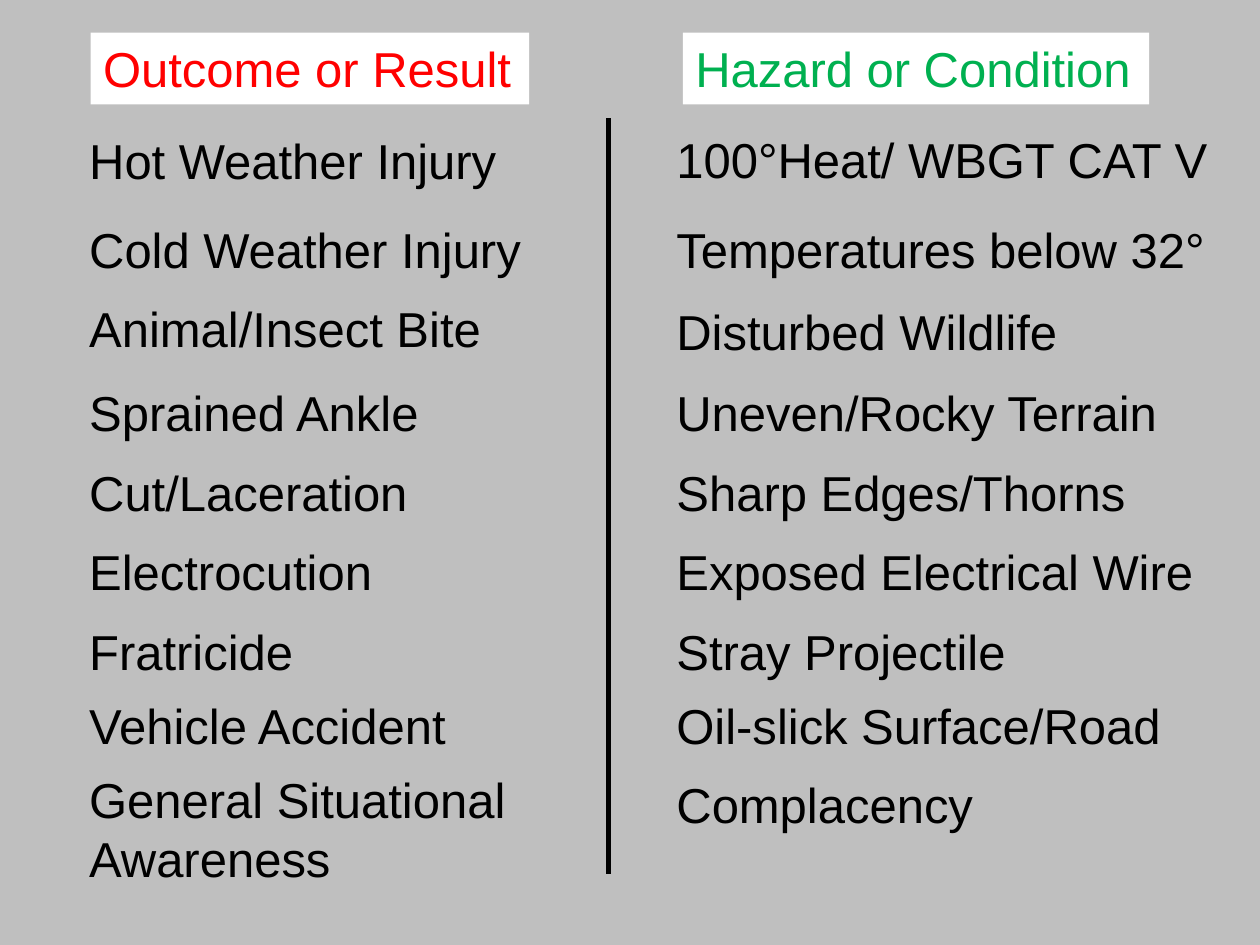
import pptx
import pptx.dml.color
import pptx.enum.shapes
import pptx.enum.text
import pptx.oxml
import pptx.util
from pptx.util import Inches

BLACK, WHITE, GRAY = "000000", "FFFFFF", "BFBFBF"
LINE_HEIGHT, PADDING = 0.47, 0.1

# Headings: text, left, width, colour
headings = [
    ("Outcome or Result", 0.72, 3.48, "FF0000"),
    ("Hazard or Condition", 5.42, 3.7, "00B050"),
]
heading_top = 0.26

# Entries of each column: lines, top, width
outcomes = [
    (["Hot Weather Injury"], 0.99, 3.47),
    (["Cold Weather Injury"], 1.69, 3.67),
    (["Animal/Insect Bite"], 2.32, 3.35),
    (["Sprained Ankle"], 2.99, 2.85),
    (["Cut/Laceration"], 3.62, 2.76),
    (["Electrocution"], 4.25, 2.48),
    (["Fratricide"], 4.88, 1.84),
    (["Vehicle Accident"], 5.47, 3.07),
    (["General Situational", "Awareness"], 6.06, 3.66),
]
hazards = [
    (["100°Heat/ WBGT CAT V"], 0.98, 4.57),
    (["Temperatures below 32°"], 1.69, 4.56),
    (["Disturbed Wildlife"], 2.34, 3.26),
    (["Uneven/Rocky Terrain"], 2.99, 4.2),
    (["Sharp Edges/Thorns"], 3.62, 3.81),
    (["Exposed Electrical Wire"], 4.25, 4.35),
    (["Stray Projectile"], 4.88, 2.85),
    (["Oil-slick Surface/Road"], 5.47, 4.09),
    (["Complacency"], 6.1, 2.59),
]
columns = [(0.61, outcomes), (5.27, hazards)]


def rgb(value):
    return pptx.dml.color.RGBColor.from_string(value)


def add_label(slide, lines, left, top, width, color, fill=None):
    height = LINE_HEIGHT * len(lines) + PADDING
    box = [Inches(n) for n in (left, top, width, height)]
    if fill:
        label = slide.shapes.add_shape(
            pptx.enum.shapes.MSO_SHAPE.RECTANGLE, *box)
        label.shadow.inherit = False
        label.fill.solid()
        label.fill.fore_color.rgb = rgb(fill)
        label.line.fill.background()
    else:
        label = slide.shapes.add_textbox(*box)
    frame = label.text_frame
    frame.word_wrap = False
    frame.auto_size = pptx.enum.text.MSO_AUTO_SIZE.SHAPE_TO_FIT_TEXT
    frame.vertical_anchor = pptx.enum.text.MSO_ANCHOR.TOP
    for i, line in enumerate(lines):
        paragraph = frame.add_paragraph() if i else frame.paragraphs[0]
        paragraph.alignment = pptx.enum.text.PP_ALIGN.LEFT
        run = paragraph.add_run()
        run.text = line
        run.font.name = "Arial"
        run.font.size = pptx.util.Pt(28)
        run.font.color.rgb = rgb(color)


def main():
    deck = pptx.Presentation()
    deck.slide_width, deck.slide_height = Inches(10), Inches(7.5)
    slide = deck.slides.add_slide(deck.slide_layouts[6])
    slide.background.fill.solid()
    slide.background.fill.fore_color.rgb = rgb(GRAY)

    # Divider between the columns
    divider = slide.shapes.add_connector(
        pptx.enum.shapes.MSO_CONNECTOR.STRAIGHT,
        Inches(4.83), Inches(0.94), Inches(4.83), Inches(6.94))
    divider.line.color.rgb = rgb(BLACK)
    divider.line.width = pptx.util.Pt(2.5)
    divider.element.spPr.append(
        pptx.oxml.parse_xml(
            '<a:effectLst xmlns:a='
            '"http://schemas.openxmlformats.org/drawingml/2006/main"/>'))

    # Headings
    for heading, left, width, color in headings:
        add_label(slide, [heading], left, heading_top, width, color, WHITE)

    # Column entries
    for left, entries in columns:
        for lines, top, width in entries:
            add_label(slide, lines, left, top, width, BLACK)

    deck.save("out.pptx")


if __name__ == "__main__":
    main()
